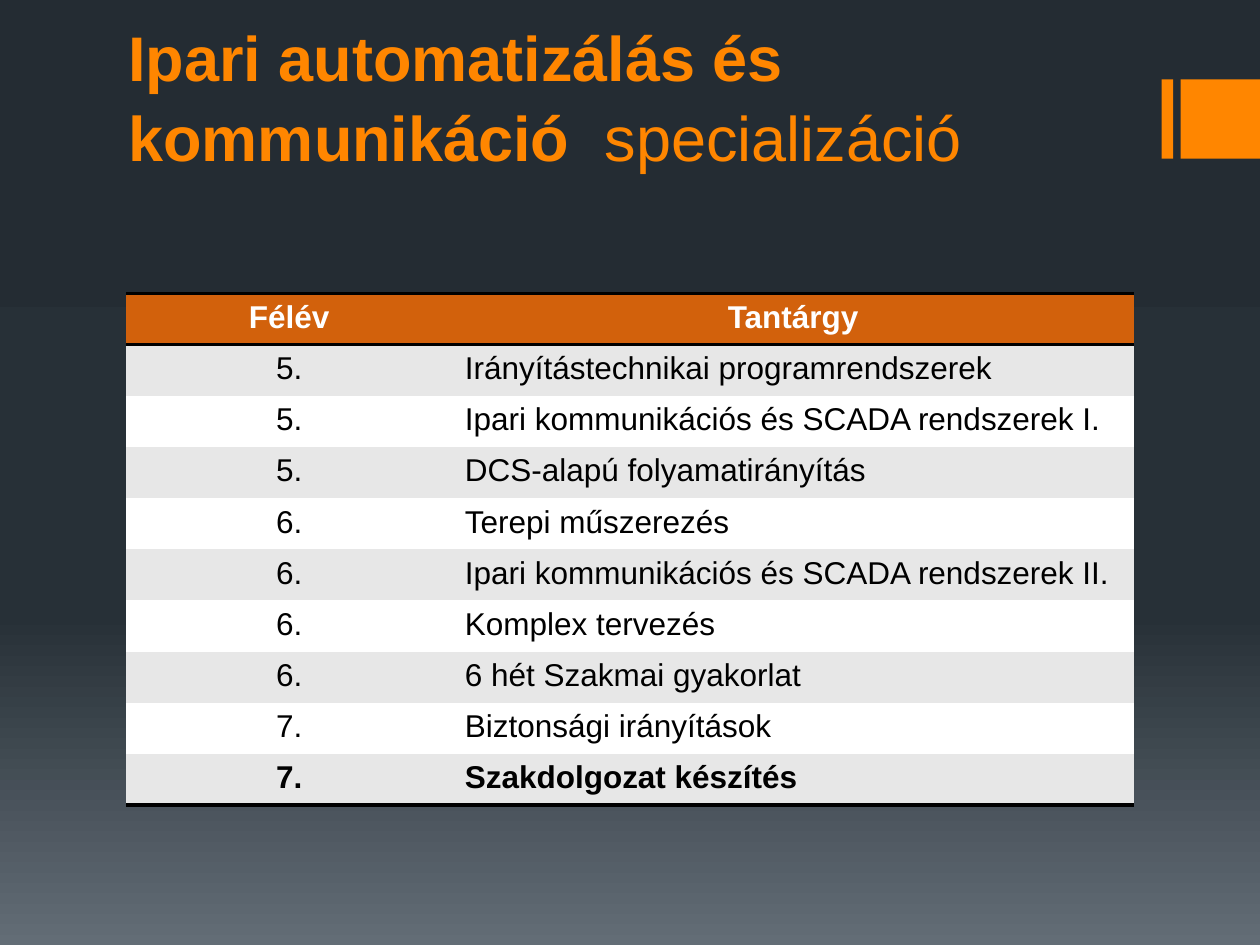
from copy import deepcopy

from lxml.etree import SubElement
from pptx import Presentation
from pptx.dml.color import RGBColor
from pptx.enum.shapes import MSO_SHAPE
from pptx.enum.text import MSO_ANCHOR, MSO_AUTO_SIZE, PP_ALIGN
from pptx.oxml.ns import qn
from pptx.util import Inches, Pt

FONT = "Arial"
ORANGE = RGBColor(0xFF, 0x86, 0x00)
HEADER = RGBColor(0xD2, 0x61, 0x0C)
BAND = RGBColor(0xE7, 0xE7, 0xE7)
WHITE = RGBColor(0xFF, 0xFF, 0xFF)
BLACK = RGBColor(0x00, 0x00, 0x00)
BACKGROUND = [
    (0, RGBColor(0x24, 0x2C, 0x33)),
    (0.65, RGBColor(0x27, 0x30, 0x37)),
    (1, RGBColor(0x63, 0x6D, 0x76)),
]
NO_STYLE = "{2D5ABB26-0587-4C30-8999-92F81FD0307C}"

TITLE = [("Ipari automatizálás és kommunikáció  ", True), ("specializáció", False)]
ACCENT_BARS = [(9.22, 0.09), (9.37, 0.63)]
COLUMN_WIDTHS = [2.59, 5.41]
ROW_HEIGHT = 0.406
ROWS = [
    ("Félév", "Tantárgy"),
    ("5.", "Irányítástechnikai programrendszerek"),
    ("5.", "Ipari kommunikációs és SCADA rendszerek I."),
    ("5.", "DCS-alapú folyamatirányítás"),
    ("6.", "Terepi műszerezés"),
    ("6.", "Ipari kommunikációs és SCADA rendszerek II."),
    ("6.", "Komplex tervezés"),
    ("6.", "6 hét Szakmai gyakorlat"),
    ("7.", "Biztonsági irányítások"),
    ("7.", "Szakdolgozat készítés"),
]


def paint_background(page):
    fill = page.background.fill
    fill.gradient()
    fill.gradient_angle = 270
    stops = page._element.xpath(".//a:gsLst")[0]
    stops.append(deepcopy(stops[-1]))
    for stop, (position, color) in zip(fill.gradient_stops, BACKGROUND):
        stop.position = position
        stop.color.rgb = color


def add_accent_bars(page):
    for left, width in ACCENT_BARS:
        bar = page.shapes.add_shape(MSO_SHAPE.RECTANGLE, Inches(left), Inches(0.63),
                                    Inches(width), Inches(0.63))
        bar.shadow.inherit = False
        bar.fill.solid()
        bar.fill.fore_color.rgb = ORANGE
        bar.line.fill.background()


def fill_title(page):
    box = page.shapes.title
    box.left, box.top, box.width, box.height = map(Inches, (0.92, 0.42, 8, 1.01))
    frame = box.text_frame
    frame.word_wrap = True
    frame.auto_size = MSO_AUTO_SIZE.NONE
    frame.vertical_anchor = MSO_ANCHOR.BOTTOM
    para = frame.paragraphs[0]
    para.alignment = PP_ALIGN.LEFT
    para.line_spacing = 1.05
    para.font.name, para.font.size = FONT, Pt(36)
    para.font.color.rgb = ORANGE
    for text, bold in TITLE:
        span = para.add_run()
        span.text = text
        span.font.bold = bold


def add_border(cell, side):
    line = SubElement(cell._tc.get_or_add_tcPr(), qn(f"a:{side}"), w=str(Pt(2)))
    SubElement(SubElement(line, qn("a:solidFill")), qn("a:srgbClr"), val=str(BLACK))


def add_subject_table(page):
    table = page.shapes.add_table(len(ROWS), len(COLUMN_WIDTHS), Inches(1), Inches(2.33),
                                  Inches(sum(COLUMN_WIDTHS)),
                                  Inches(ROW_HEIGHT * len(ROWS))).table
    table._tbl.xpath(".//a:tableStyleId")[0].text = NO_STYLE
    for column, width in zip(table.columns, COLUMN_WIDTHS):
        column.width = Inches(width)
    last = len(ROWS) - 1
    for r, texts in enumerate(ROWS):
        table.rows[r].height = Inches(ROW_HEIGHT)
        for c, text in enumerate(texts):
            cell = table.cell(r, c)
            if r == 0:
                add_border(cell, "lnT")
            if r in (0, last):
                add_border(cell, "lnB")
            cell.fill.solid()
            cell.fill.fore_color.rgb = HEADER if r == 0 else BAND if r % 2 else WHITE
            cell.text = text
            para = cell.text_frame.paragraphs[0]
            para.alignment = PP_ALIGN.CENTER if r == 0 or c == 0 else PP_ALIGN.LEFT
            para.font.name, para.font.size = FONT, Pt(18)
            para.font.bold = r in (0, last)
            para.font.color.rgb = WHITE if r == 0 else BLACK


def main():
    deck = Presentation()
    deck.slide_width, deck.slide_height = Inches(10), Inches(7.5)
    page = deck.slides.add_slide(deck.slide_layouts[5])
    paint_background(page)
    add_accent_bars(page)
    fill_title(page)
    add_subject_table(page)
    deck.save("out.pptx")


if __name__ == "__main__":
    main()
